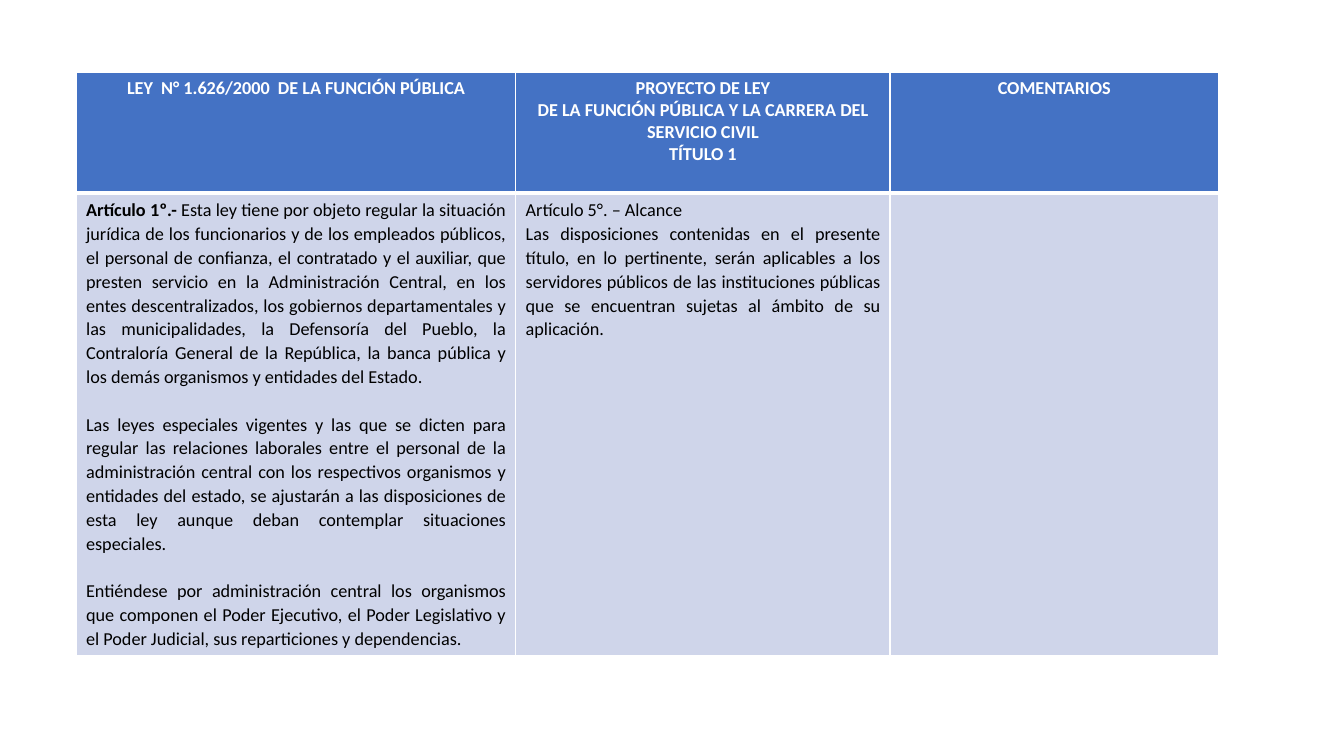
from dataclasses import dataclass

from lxml.etree import SubElement
from pptx import Presentation
from pptx.dml.color import RGBColor
from pptx.enum.text import PP_ALIGN as Align
from pptx.oxml.ns import qn
from pptx.util import Pt


@dataclass(frozen=True)
class Theme:
    font: str = "Calibri"
    size: float = 13
    leading: float = 17
    header_fill: str = "4472C4"
    body_fill: str = "CFD5EA"
    header_text: str = "FFFFFF"
    body_text: str = "000000"
    border: str = "FFFFFF"
    thin: float = 1
    thick: float = 3


THEME = Theme()

COLUMN_WIDTHS = [314, 267.5, 234.5]
ROW_HEIGHTS = [86.4, 330.2]

HEADERS = [
    ["LEY  N° 1.626/2000  DE LA FUNCIÓN PÚBLICA"],
    [
        "PROYECTO DE LEY",
        "DE LA FUNCIÓN PÚBLICA Y LA CARRERA DEL SERVICIO CIVIL",
        "TÍTULO 1",
    ],
    ["COMENTARIOS"],
]

ARTICLE_LABEL = "Artículo 1º.-"
CURRENT_LAW = [
    " Esta ley tiene por objeto regular la situación jurídica de los funcionarios y de los "
    "empleados públicos, el personal de confianza, el contratado y el auxiliar, que presten "
    "servicio en la Administración Central, en los entes descentralizados, los gobiernos "
    "departamentales y las municipalidades, la Defensoría del Pueblo, la Contraloría General "
    "de la República, la banca pública y los demás organismos y entidades del Estado. ",
    "Las leyes especiales vigentes y las que se dicten para regular las relaciones laborales "
    "entre el personal de la administración central con los respectivos organismos y entidades "
    "del estado, se ajustarán a las disposiciones de esta ley aunque deban contemplar "
    "situaciones especiales.",
    "Entiéndese por administración central los organismos que componen el Poder Ejecutivo, el "
    "Poder Legislativo y el Poder Judicial, sus reparticiones y dependencias.",
]
BILL = [
    "Artículo 5°. – Alcance",
    "Las disposiciones contenidas en el presente título, en lo pertinente, serán aplicables a "
    "los servidores públicos de las instituciones públicas que se encuentran sujetas al ámbito "
    "de su aplicación.",
]


def add_span(para, text, color, bold):
    span = para.add_run()
    span.text = text
    span.font.name = THEME.font
    span.font.size = Pt(THEME.size)
    span.font.bold = bold
    span.font.color.rgb = RGBColor.from_string(color)


def paint_cell(cell, fill, bottom):
    properties = cell._tc.get_or_add_tcPr()
    for side in ("L", "R", "T", "B"):
        width = bottom if side == "B" else THEME.thin
        line = SubElement(properties, qn(f"a:ln{side}"), w=str(Pt(width)))
        paint = SubElement(line, qn("a:solidFill"))
        SubElement(paint, qn("a:srgbClr"), val=THEME.border)
    cell.fill.solid()
    cell.fill.fore_color.rgb = RGBColor.from_string(fill)


def cell_paragraphs(cell, count):
    frame = cell.text_frame
    for _ in range(count - 1):
        frame.add_paragraph()
    return frame.paragraphs


def write_header(cell, lines):
    paint_cell(cell, THEME.header_fill, THEME.thick)
    for para, text in zip(cell_paragraphs(cell, len(lines)), lines):
        para.alignment = Align.CENTER
        add_span(para, text, THEME.header_text, True)


def write_body(cell, texts, label="", gap=0):
    paint_cell(cell, THEME.body_fill, THEME.thin)
    for index, (para, text) in enumerate(zip(cell_paragraphs(cell, len(texts)), texts)):
        para.alignment = Align.JUSTIFY
        para.line_spacing = Pt(THEME.leading)
        if index:
            para.space_before = Pt(gap)
        elif label:
            add_span(para, label, THEME.body_text, True)
        add_span(para, text, THEME.body_text, False)


def add_comparison_table(page):
    frame = page.shapes.add_table(
        len(ROW_HEIGHTS), len(COLUMN_WIDTHS),
        Pt(54.3), Pt(51.4), Pt(sum(COLUMN_WIDTHS)), Pt(sum(ROW_HEIGHTS)),
    )
    table = frame.table
    table.horz_banding = False
    for column, width in zip(table.columns, COLUMN_WIDTHS):
        column.width = Pt(width)
    for row, height in zip(table.rows, ROW_HEIGHTS):
        row.height = Pt(height)
    return table


def main():
    deck = Presentation()
    deck.slide_width, deck.slide_height = Pt(960), Pt(540)
    page = deck.slides.add_slide(deck.slide_layouts[6])
    table = add_comparison_table(page)
    for column, lines in enumerate(HEADERS):
        write_header(table.cell(0, column), lines)
    write_body(table.cell(1, 0), CURRENT_LAW, ARTICLE_LABEL, THEME.leading)
    write_body(table.cell(1, 1), BILL)
    write_body(table.cell(1, 2), [])
    deck.save("out.pptx")


if __name__ == "__main__":
    main()
